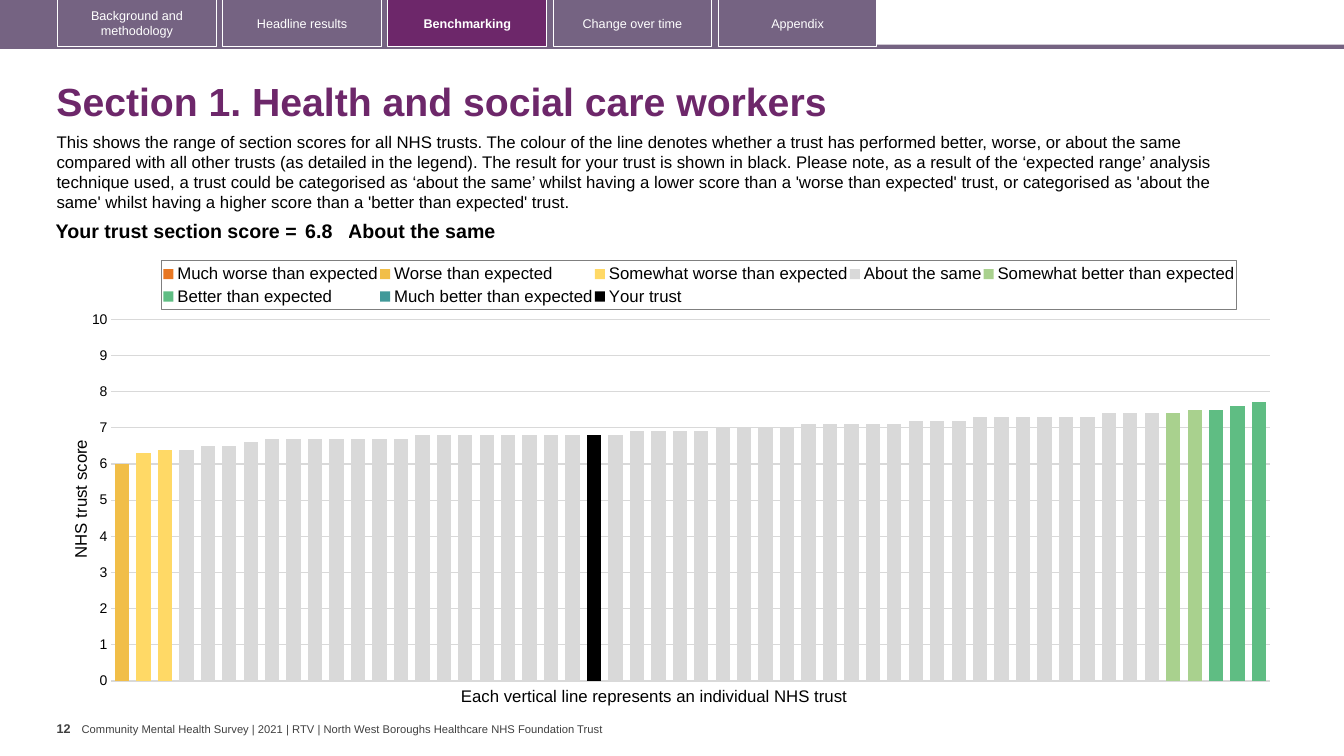
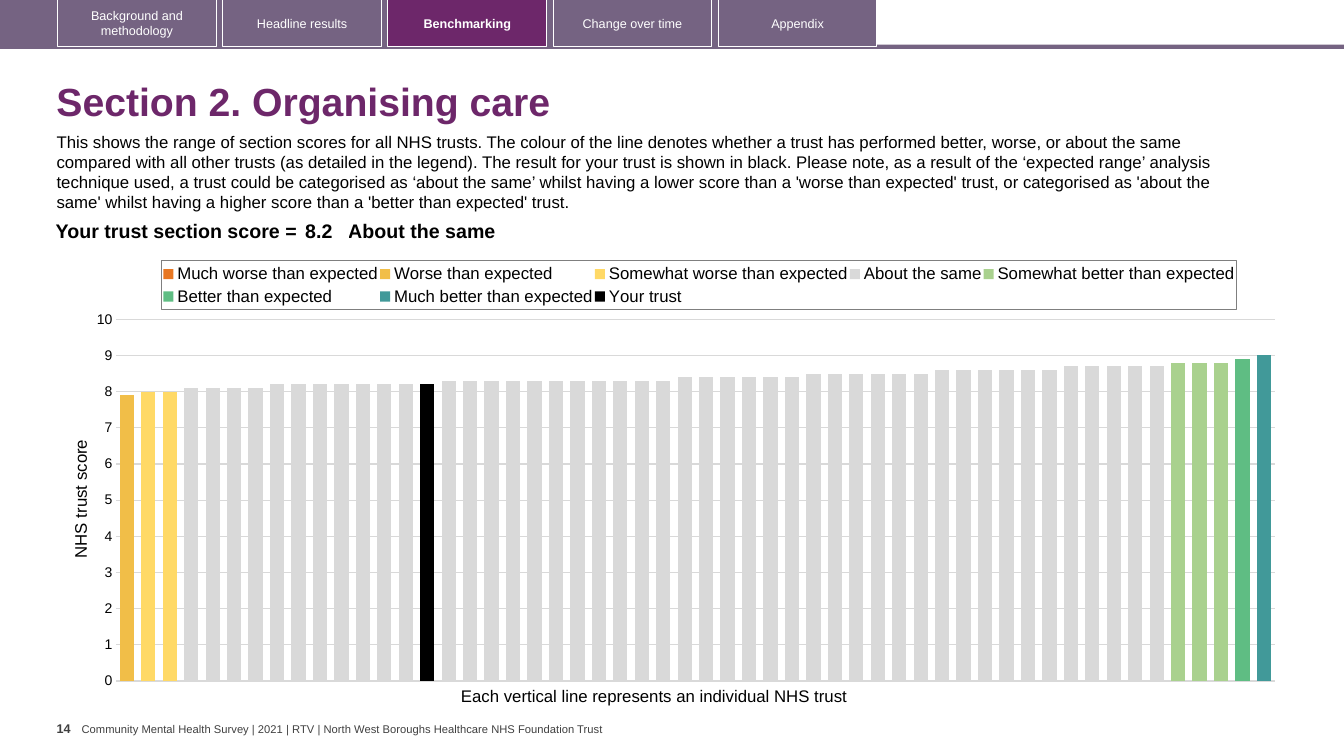
from copy import deepcopy
from itertools import chain, repeat

from lxml import etree
from pptx import Presentation
from pptx.chart.data import CategoryChartData
from pptx.dml.color import RGBColor
from pptx.enum.chart import XL_CHART_TYPE, XL_LEGEND_POSITION, XL_TICK_MARK
from pptx.enum.shapes import MSO_SHAPE
from pptx.enum.text import MSO_ANCHOR, MSO_AUTO_SIZE, PP_ALIGN
from pptx.oxml import parse_xml
from pptx.oxml.ns import nsdecls, qn
from pptx.util import Inches, Pt

COLUMNS = 160
ROWS = 90
UNIT = Inches(13.3333) / COLUMNS

LEFT, CENTER, RIGHT = PP_ALIGN.LEFT, PP_ALIGN.CENTER, PP_ALIGN.RIGHT
TOP, MIDDLE = MSO_ANCHOR.TOP, MSO_ANCHOR.MIDDLE
RECTANGLE = MSO_SHAPE.RECTANGLE
CLUSTERED = XL_CHART_TYPE.COLUMN_CLUSTERED
LEGEND_TOP = XL_LEGEND_POSITION.TOP
NO_TICKS = XL_TICK_MARK.NONE
NO_AUTOFIT = MSO_AUTO_SIZE.NONE

FONT = "Arial"
BLACK, WHITE, GREY, GRID = "000000", "FFFFFF", "404040", "D9D9D9"
BAND, ACCENT = "756382", "6D276A"

TABS = ["Background and methodology", "Headline results", "Benchmarking",
        "Change over time", "Appendix"]
ACTIVE_TAB = "Benchmarking"
FOOTER = ("Community Mental Health Survey | 2021 | RTV | "
          "North West Boroughs Healthcare NHS Foundation Trust")
INTRO = (
    "This shows the range of section scores for all NHS trusts. The colour of the line "
    "denotes whether a trust has performed better, worse, or about the same compared with "
    "all other trusts (as detailed in the legend). The result for your trust is shown in "
    "black. Please note, as a result of the ‘expected range’ analysis technique used, a "
    "trust could be categorised as ‘about the same’ whilst having a lower score than a "
    "'worse than expected' trust, or categorised as 'about the same' whilst having a "
    "higher score than a 'better than expected' trust.")
CAPTION = "Each vertical line represents an individual NHS trust"

RATINGS = {
    "Much worse than expected": "E87722",
    "Worse than expected": "F1BE48",
    "Somewhat worse than expected": "FFD966",
    "About the same": "D9D9D9",
    "Somewhat better than expected": "A9D18E",
    "Better than expected": "5FBD83",
    "Much better than expected": "419999",
}
SECTIONS = [
    {
        "title": "Section 1. Health and social care workers",
        "page": "12",
        "score_counts": [(6, 1), (6.3, 1), (6.4, 2), (6.5, 2), (6.6, 1), (6.7, 7),
                         (6.8, 10), (6.9, 4), (7, 4), (7.1, 5), (7.2, 3), (7.3, 6),
                         (7.4, 4), (7.5, 2), (7.6, 1), (7.7, 1)],
        "rating_counts": [0, 1, 2, 46, 2, 3, 0],
        "trust_rank": 23,
    },
    {
        "title": "Section 2. Organising care",
        "page": "14",
        "score_counts": [(7.9, 1), (8, 2), (8.1, 4), (8.2, 8), (8.3, 11), (8.4, 6),
                         (8.5, 6), (8.6, 6), (8.7, 5), (8.8, 3), (8.9, 1), (9, 1)],
        "rating_counts": [0, 1, 2, 46, 3, 1, 1],
        "trust_rank": 15,
    },
]


def rgb(code):
    return RGBColor.from_string(code)


def units(count):
    return round(count * UNIT)


def area(*counts):
    return [units(count) for count in counts]


def set_font(font, size, color=BLACK, bold=False):
    font.name = FONT
    font.size = Pt(size)
    font.bold = bold
    font.color.rgb = rgb(color)


def write(frame, text, size, color=BLACK, bold=False, align=LEFT, anchor=TOP):
    frame.word_wrap = True
    frame.vertical_anchor = anchor
    para = frame.paragraphs[0]
    para.text = text
    para.alignment = align
    set_font(para.font, size, color, bold)
    return para


def add_text(slide, place, text, size, inset=0.1, **style):
    box = slide.shapes.add_textbox(*area(*place))
    box.text_frame.margin_left = box.text_frame.margin_right = Inches(inset)
    write(box.text_frame, text, size, **style)
    return box


def add_bar(slide, place, fill=None, line=None):
    bar = slide.shapes.add_shape(RECTANGLE, *area(*place))
    bar.shadow.inherit = False
    if fill:
        bar.fill.solid()
        bar.fill.fore_color.rgb = rgb(fill)
    else:
        bar.fill.background()
    if line:
        bar.line.color.rgb = rgb(line)
        bar.line.width = Pt(0.75)
    else:
        bar.line.fill.background()
    return bar


def add_tab(slide, index, label):
    active = label == ACTIVE_TAB
    place = (6.87 + 19.66 * index, -0.06, 18.88, 5.63)
    tab = add_bar(slide, place, ACCENT if active else None, WHITE)
    write(tab.text_frame, label, 9, WHITE, active, CENTER, MIDDLE)
    return tab


def share_frame(slide, layout):
    parts = [add_bar(slide, (0, 5.33, COLUMNS, 0.5), BAND),
             add_bar(slide, (0, 0, 104.4, 5.6), BAND)]
    parts += [add_tab(slide, index, label) for index, label in enumerate(TABS)]
    footer = add_text(slide, (9.72, 85.97, 70, 1.6), FOOTER, 8, inset=0,
                      color=GREY, anchor=MIDDLE)
    footer.text_frame.margin_top = footer.text_frame.margin_bottom = 0
    for part in parts + [footer]:
        layout.shapes.element.append(part.element)


def set_title(slide, text):
    title = slide.shapes.title
    title.left, title.top, title.width, title.height = area(5.52, 8.05, 150, 8.7)
    title.text_frame.auto_size = NO_AUTOFIT
    para = write(title.text_frame, text, 28, ACCENT, True, LEFT, MIDDLE)
    para.line_spacing = 0.9


def add_score_line(slide, score):
    widths = [31.6, 5.6, 103.1]
    texts = ["Your trust section score =", str(score), "About the same"]
    aligns = [RIGHT, LEFT, LEFT]
    insets = [0.04, 0.04, 0]
    place = area(4.26, 25.8, sum(widths), 3.7)
    table = slide.shapes.add_table(1, len(widths), *place).table
    table.first_row = table.horz_banding = False
    for index, width in enumerate(widths):
        table.columns[index].width = units(width)
        cell = table.cell(0, index)
        cell.fill.background()
        cell.margin_left = cell.margin_right = Inches(insets[index])
        cell.margin_top = cell.margin_bottom = Inches(0.04)
        write(cell.text_frame, texts[index], 14, bold=True, align=aligns[index])


def set_layout(part, index, inner=False, **shares):
    for old in part.findall(qn("c:layout")):
        part.remove(old)
    layout = part.makeelement(qn("c:layout"))
    manual = etree.SubElement(layout, qn("c:manualLayout"))
    if inner:
        etree.SubElement(manual, qn("c:layoutTarget"), val="inner")
    for mode in ("xMode", "yMode"):
        etree.SubElement(manual, qn("c:" + mode), val="edge")
    for name, share in shares.items():
        etree.SubElement(manual, qn("c:" + name), val=str(share))
    part.insert(index, layout)


def chart_data(scores, section):
    data = CategoryChartData()
    data.categories = [str(rank) for rank in range(1, len(scores) + 1)]
    start = 0
    for rating, count in zip(RATINGS, section["rating_counts"]):
        end = start + count
        data.add_series(rating, [score if start <= index < end else None
                                 for index, score in enumerate(scores)])
        start = end
    data.add_series("Your trust", [score if rank == section["trust_rank"] else None
                                   for rank, score in enumerate(scores, 1)])
    return data


def format_value_axis(axis):
    axis.minimum_scale, axis.maximum_scale, axis.major_unit = 0, 10, 1
    axis.major_tick_mark = axis.minor_tick_mark = NO_TICKS
    axis.format.line.fill.background()
    axis.major_gridlines.format.line.color.rgb = rgb(GRID)
    axis.major_gridlines.format.line.width = Pt(0.75)
    set_font(axis.tick_labels.font, 10)
    para = axis.axis_title.text_frame.paragraphs[0]
    para.text = "NHS trust score"
    set_font(para.font, 12)


def format_legend(chart):
    chart.has_legend = True
    chart.legend.position = LEGEND_TOP
    chart.legend.include_in_layout = False
    set_font(chart.legend.font, 12)
    legend = chart.element.xpath(".//c:legend")[0]
    set_layout(legend, 1, x=0.077, y=0.027, w=0.878, h=0.11)
    border = parse_xml(
        f'<c:spPr {nsdecls("c", "a")}><a:ln w="9525"><a:solidFill>'
        '<a:srgbClr val="7F7F7F"/></a:solidFill></a:ln></c:spPr>')
    legend.find(qn("c:txPr")).addprevious(border)


def move_last_series_to_right_axis(plot_area):
    bars, categories, values = (
        plot_area.find(qn("c:" + name)) for name in ("barChart", "catAx", "valAx"))
    right_bars, right_categories, right_values = map(deepcopy, (bars, categories, values))
    bars.remove(bars.findall(qn("c:ser"))[-1])
    for series in right_bars.findall(qn("c:ser"))[:-1]:
        right_bars.remove(series)
    for name in ("majorGridlines", "title"):
        right_values.remove(right_values.find(qn("c:" + name)))
    for name, setting in (("axPos", "r"), ("tickLblPos", "none"), ("crosses", "max")):
        right_values.find(qn("c:" + name)).set("val", setting)
    renamed = {categories.find(qn("c:axId")).get("val"): "1001",
               values.find(qn("c:axId")).get("val"): "1002"}
    for part in (right_bars, right_categories, right_values):
        for link in part.iter(qn("c:axId"), qn("c:crossAx")):
            link.set("val", renamed[link.get("val")])
    bars.addnext(right_bars)
    values.addnext(right_categories)
    right_categories.addnext(right_values)


def add_score_chart(slide, scores, section, plot_left):
    place = area(8, 29.6, 145.8, 53.3)
    data = chart_data(scores, section)
    chart = slide.shapes.add_chart(CLUSTERED, *place, data).chart
    chart.has_title = False
    set_font(chart.font, 10)
    plot = chart.plots[0]
    plot.gap_width, plot.overlap, plot.vary_by_categories = 50, 100, False
    for series, color in zip(plot.series, chain(RATINGS.values(), [BLACK])):
        series.invert_if_negative = False
        series.format.fill.solid()
        series.format.fill.fore_color.rgb = rgb(color)
    chart.category_axis.visible = False
    format_value_axis(chart.value_axis)
    format_legend(chart)
    plot_area = chart.element.xpath(".//c:plotArea")[0]
    set_layout(plot_area, 0, inner=True, x=plot_left, y=0.158, w=0.946, h=0.808)
    title = chart.element.xpath(".//c:valAx/c:title")[0]
    set_layout(title, 1, x=0, y=0.42)
    title.xpath(".//a:bodyPr")[0].set("rot", "-5400000")
    move_last_series_to_right_axis(plot_area)


def fill_section(slide, section, plot_left):
    scores = list(chain.from_iterable(
        repeat(score, count) for score, count in section["score_counts"]))
    set_title(slide, section["title"])
    add_text(slide, (5.55, 15.05, 145.6, 10.9), INTRO, 12)
    add_text(slide, (6.75, 85.2, 3, 4.8), section["page"], 9, inset=0,
             color=GREY, bold=True)
    add_score_chart(slide, scores, section, plot_left)
    add_text(slide, (53.7, 81, 49.3, 3.6), CAPTION, 12)
    add_score_line(slide, scores[section["trust_rank"] - 1])


def main():
    deck = Presentation()
    deck.slide_width, deck.slide_height = area(COLUMNS, ROWS)
    layout = deck.slide_layouts.get_by_name("Title Only")
    for holder in list(layout.placeholders)[1:]:
        layout.shapes.element.remove(holder.element)
    slides = [deck.slides.add_slide(layout) for section in SECTIONS]
    share_frame(slides[0], layout)
    for slide, section, plot_left in zip(slides, SECTIONS, (0.036, 0.04)):
        fill_section(slide, section, plot_left)
    deck.save("out.pptx")


if __name__ == "__main__":
    main()
